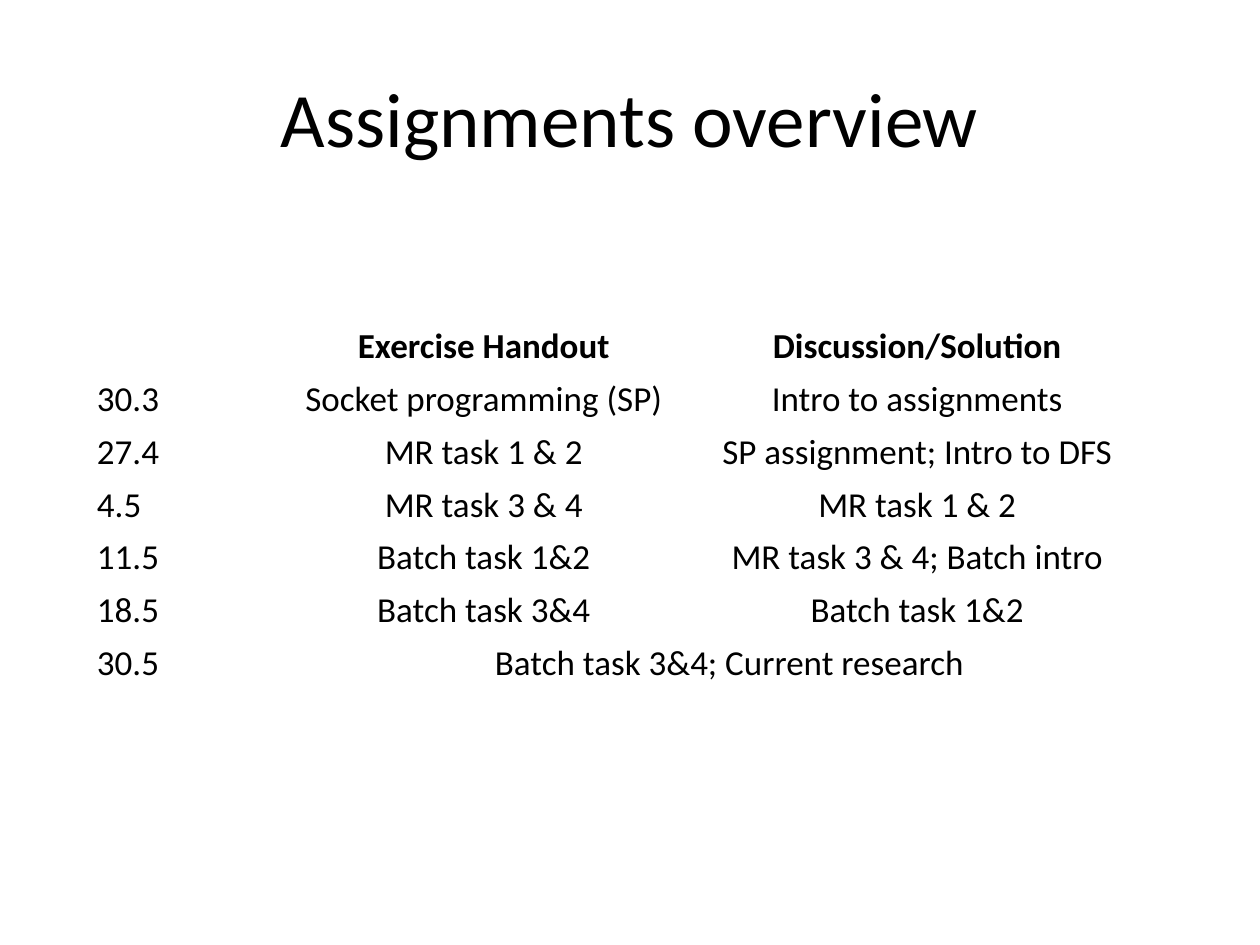
"""Build the assignments overview slide with its schedule table."""
from dataclasses import dataclass

from pptx import Presentation
from pptx.dml.color import RGBColor
from pptx.enum.text import MSO_ANCHOR, PP_ALIGN
from pptx.util import Inches, Pt

LEFT, CENTER = PP_ALIGN.LEFT, PP_ALIGN.CENTER
MIDDLE, BOTTOM = MSO_ANCHOR.MIDDLE, MSO_ANCHOR.BOTTOM

TITLE = "Assignments overview"
SCHEDULE = [
    ("", "Exercise Handout", "Discussion/Solution"),
    ("30.3", "Socket programming (SP)", "Intro to assignments"),
    ("27.4", "MR task 1 & 2", "SP assignment; Intro to DFS"),
    ("4.5", "MR task 3 & 4", "MR task 1 & 2"),
    ("11.5", "Batch task 1&2", "MR task 3 & 4; Batch intro"),
    ("18.5", "Batch task 3&4", "Batch task 1&2"),
    ("30.5", "Batch task 3&4; Current research"),
]


@dataclass(frozen=True)
class Theme:
    font: str = "Calibri"
    ink: RGBColor = RGBColor(0, 0, 0)
    title_size: int = 44
    table_size: int = 20


THEME = Theme()
SLIDE_WIDTH, SLIDE_HEIGHT = Inches(10), Inches(7.5)
TITLE_AREA = (0.05, 0.04, 0.9, 1 / 6)
TABLE_LEFT, TABLE_TOP = Inches(0.76), SLIDE_HEIGHT // 3
COLUMN_WIDTHS = [Inches(width) for width in (1.59, 2.98, 3.9)]
ROW_HEIGHT = Inches(0.42)
CELL_INSET = Inches(0.01)


def write(frame, text, size=THEME.table_size, bold=False, align=CENTER):
    para = frame.paragraphs[0]
    para.alignment = align
    span = para.add_run()
    span.text = text
    span.font.name = THEME.font
    span.font.size = Pt(size)
    span.font.bold = bold
    span.font.color.rgb = THEME.ink


def add_title(page):
    left, top, width, height = TITLE_AREA
    box = page.shapes.add_textbox(
        int(left * SLIDE_WIDTH), int(top * SLIDE_HEIGHT),
        int(width * SLIDE_WIDTH), int(height * SLIDE_HEIGHT))
    box.text_frame.word_wrap = True
    box.text_frame.vertical_anchor = MIDDLE
    write(box.text_frame, TITLE, size=THEME.title_size)


def add_schedule(page):
    table = page.shapes.add_table(
        len(SCHEDULE), len(COLUMN_WIDTHS), TABLE_LEFT, TABLE_TOP,
        sum(COLUMN_WIDTHS), ROW_HEIGHT * len(SCHEDULE)).table
    table.first_row = table.horz_banding = False
    for column, width in zip(table.columns, COLUMN_WIDTHS):
        column.width = width
    for cell in table.iter_cells():
        cell.fill.background()
        cell.vertical_anchor = BOTTOM
        cell.margin_left = cell.margin_right = cell.margin_top = CELL_INSET
        cell.margin_bottom = 0
    last_column = len(COLUMN_WIDTHS) - 1
    for row, entries in enumerate(SCHEDULE):
        if len(entries) <= last_column:
            table.cell(row, len(entries) - 1).merge(table.cell(row, last_column))
        for column, text in enumerate(entries):
            if text:
                write(table.cell(row, column).text_frame, text,
                      bold=row == 0, align=CENTER if column else LEFT)


def main():
    deck = Presentation()
    deck.slide_width, deck.slide_height = SLIDE_WIDTH, SLIDE_HEIGHT
    page = deck.slides.add_slide(deck.slide_layouts[6])
    add_title(page)
    add_schedule(page)
    deck.save("out.pptx")


if __name__ == "__main__":
    main()
